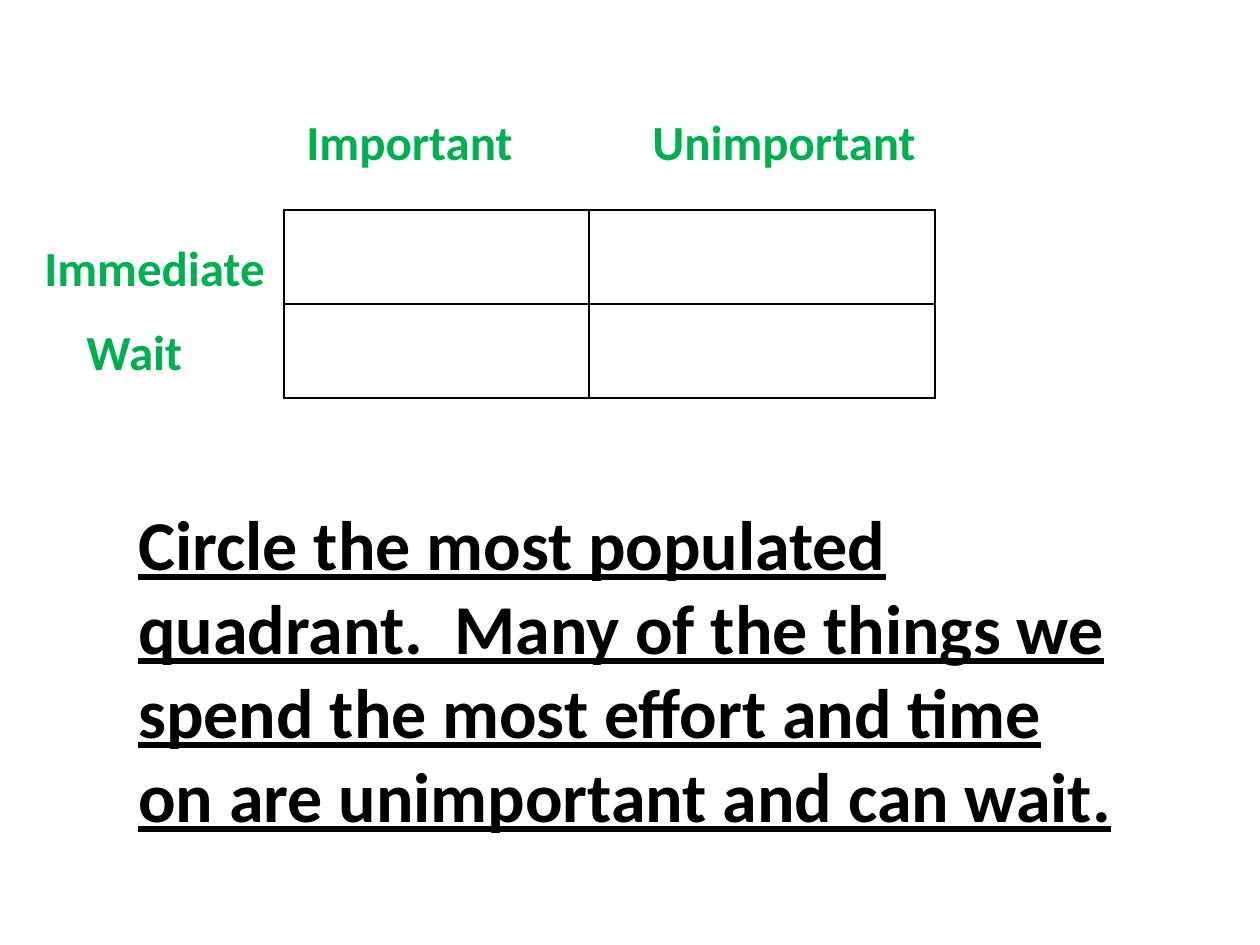
from lxml.etree import SubElement
from pptx import Presentation
from pptx.dml.color import RGBColor
from pptx.enum.text import MSO_AUTO_SIZE
from pptx.oxml.ns import qn
from pptx.util import Pt

PX = 914400 // 126  # EMU per pixel
COLORS = {"label": "00B050", "text": "000000", "border": "000000", "cell": "FFFFFF"}

presentation = Presentation()
presentation.slide_width = 1260 * PX
presentation.slide_height = 945 * PX
slide = presentation.slides.add_slide(presentation.slide_layouts[6])


def add_text(text, left, top, width, height, size, color, underline=False):
    text_box = slide.shapes.add_textbox(left * PX, top * PX, width * PX, height * PX)
    text_frame = text_box.text_frame
    text_frame.text = text
    text_frame.word_wrap = True
    text_frame.auto_size = MSO_AUTO_SIZE.SHAPE_TO_FIT_TEXT
    font = text_frame.paragraphs[0].runs[0].font
    font.name = "Calibri"
    font.size = Pt(size)
    font.bold = True
    font.underline = underline
    font.color.rgb = RGBColor.from_string(COLORS[color])


def add_borders(cell):
    properties = cell._tc.get_or_add_tcPr()
    for position, side in enumerate(("a:lnL", "a:lnR", "a:lnT", "a:lnB")):
        line = SubElement(properties, qn(side), w=str(Pt(1)))
        fill = SubElement(line, qn("a:solidFill"))
        SubElement(fill, qn("a:srgbClr"), val=COLORS["border"])
        properties.insert(position, line)  # borders come before the fill


# Empty quadrant table
column_widths = [305, 346]
row_height = 94
table = slide.shapes.add_table(
    2, 2, 284 * PX, 210 * PX, sum(column_widths) * PX, 2 * row_height * PX
).table
table.first_row = False
table.horz_banding = False
for column, width in zip(table.columns, column_widths):
    column.width = width * PX
for row in table.rows:
    row.height = row_height * PX
for cell in table.iter_cells():
    cell.fill.solid()
    cell.fill.fore_color.rgb = RGBColor.from_string(COLORS["cell"])
    add_borders(cell)

# Column and row labels
labels = [
    ("Important", 294, 105, 262),
    ("Unimportant", 640, 105, 325),
    ("Immediate", 32, 231, 273),
    ("Wait", 74, 315, 231),
]
for text, left, top, width in labels:
    add_text(text, left, top, width, 72, 28, "label")

# Instruction
add_text(
    "Circle the most populated quadrant.  Many of the things we spend "
    "the most effort and time on are unimportant and can wait.",
    126, 494, 998, 437, 40, "text", underline=True,
)

presentation.save("out.pptx")
